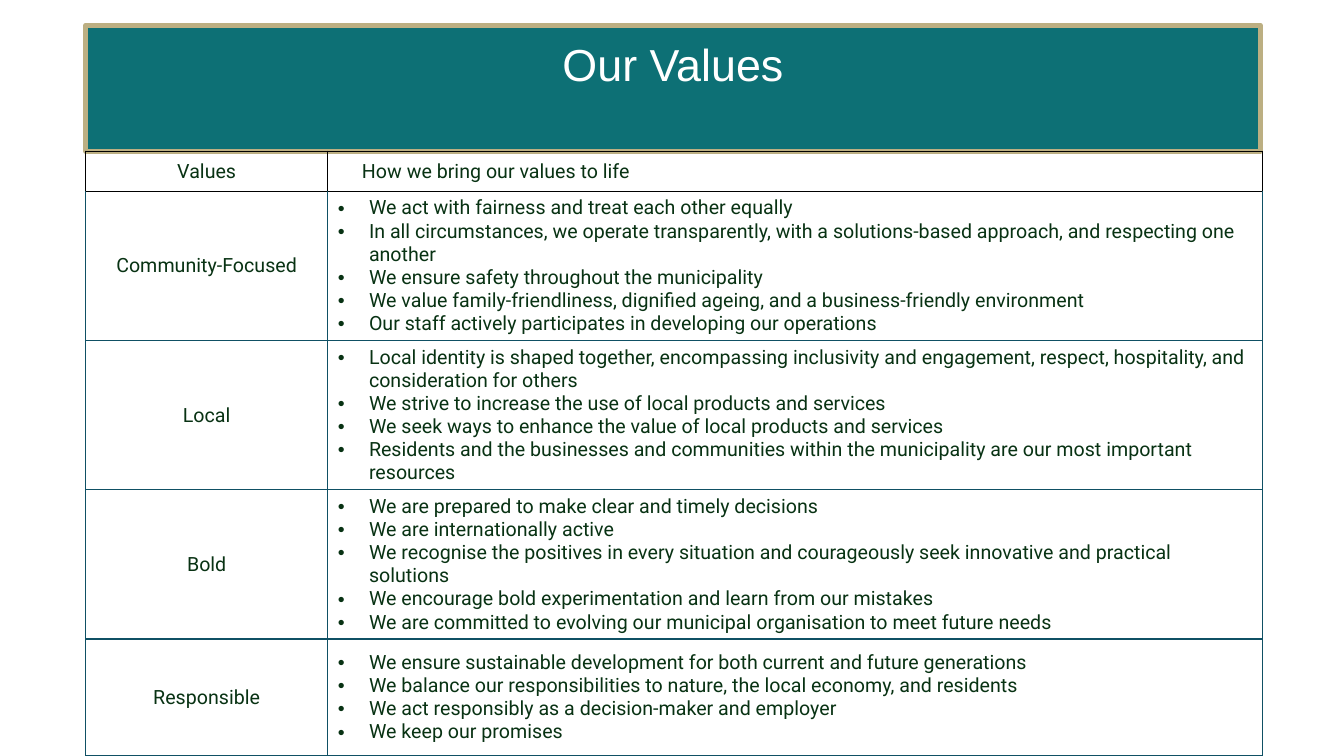
import pptx
import pptx.util
import pptx.dml.color
import pptx.enum.shapes
import pptx.enum.text
import pptx.oxml
import pptx.oxml.ns
from lxml import etree

Inches = pptx.util.Inches
RGBColor = pptx.dml.color.RGBColor
Align = pptx.enum.text.PP_ALIGN
Anchor = pptx.enum.text.MSO_ANCHOR
qn = pptx.oxml.ns.qn

TEAL = RGBColor(0x0D, 0x70, 0x75)
SAND = RGBColor(0xBC, 0xAF, 0x82)
WHITE = RGBColor(0xFF, 0xFF, 0xFF)
BLACK = RGBColor(0, 0, 0)
INK = RGBColor(0x08, 0x32, 0x13)
RULE = RGBColor(0x0F, 0x50, 0x64)

TITLE_BOX = (0.85, 0.25, 11.65, 1.25)
TABLE_BOX = (0.85, 1.5, 11.67, 6)
LABEL_WIDTH = 2.4
HEADER_HEIGHT = 0.4
LAST_HEIGHT = 1.16
BULLET_INDENT = 0.31
HEADER_INDENT = 0.24

HEADINGS = ("Values", "How we bring our values to life")
VALUES = {
    "Community-Focused": [
        "We act with fairness and treat each other equally",
        "In all circumstances, we operate transparently, with a solutions-based approach, "
        "and respecting one another",
        "We ensure safety throughout the municipality",
        "We value family-friendliness, dignified ageing, and a business-friendly environment",
        "Our staff actively participates in developing our operations",
    ],
    "Local": [
        "Local identity is shaped together, encompassing inclusivity and engagement, respect, "
        "hospitality, and consideration for others",
        "We strive to increase the use of local products and services",
        "We seek ways to enhance the value of local products and services",
        "Residents and the businesses and communities within the municipality are our most "
        "important resources",
    ],
    "Bold": [
        "We are prepared to make clear and timely decisions",
        "We are internationally active",
        "We recognise the positives in every situation and courageously seek innovative and "
        "practical solutions",
        "We encourage bold experimentation and learn from our mistakes",
        "We are committed to evolving our municipal organisation to meet future needs",
    ],
    "Responsible": [
        "We ensure sustainable development for both current and future generations",
        "We balance our responsibilities to nature, the local economy, and residents",
        "We act responsibly as a decision-maker and employer",
        "We keep our promises",
    ],
}


def write(frame, lines, size=14, font="Roboto", color=INK, align=Align.LEFT,
          spacing=None, indent=0, bullet=False):
    """Fill a text frame with one paragraph per line."""
    for index, line in enumerate(lines):
        para = frame.paragraphs[0] if index == 0 else frame.add_paragraph()
        para.alignment = align
        if spacing:
            para.line_spacing = spacing
        if indent:
            properties = para._p.get_or_add_pPr()
            properties.set("marL", str(Inches(indent)))
            if bullet:
                properties.set("indent", str(-Inches(indent)))
                face = etree.SubElement(properties, qn("a:buFont"))
                face.set("typeface", "Arial")
                etree.SubElement(properties, qn("a:buChar")).set("char", "•")
        span = para.add_run()
        span.text = line
        span.font.size = pptx.util.Pt(size)
        span.font.name = font
        span.font.bold = False
        span.font.color.rgb = color


def set_borders(cell, **colors):
    """Draw 1 pt borders; colors maps L, R, T and B to a colour."""
    properties = cell._tc.get_or_add_tcPr()
    for index, side in enumerate("LRTB"):
        line = etree.Element(qn("a:ln" + side), w=str(pptx.util.Pt(1)))
        fill = etree.SubElement(line, qn("a:solidFill"))
        etree.SubElement(fill, qn("a:srgbClr")).set("val", str(colors[side]))
        properties.insert(index, line)


def set_fill(cell, tinted):
    if not tinted:
        cell.fill.background()
        return
    cell.fill.solid()
    cell.fill.fore_color.rgb = WHITE
    color = cell._tc.tcPr.find(".//" + qn("a:srgbClr"))
    etree.SubElement(color, qn("a:alpha")).set("val", "20000")


def add_title(page, box):
    banner = page.shapes.add_shape(pptx.enum.shapes.MSO_SHAPE.RECTANGLE, *map(Inches, box))
    banner.shadow.inherit = False
    banner.fill.solid()
    banner.fill.fore_color.rgb = TEAL
    banner.line.color.rgb = SAND
    banner.line.width = pptx.util.Pt(3.5)
    frame = banner.text_frame
    frame.word_wrap = True
    frame.vertical_anchor = Anchor.TOP
    frame.margin_left = frame.margin_right = Inches(0.39)
    frame.margin_top, frame.margin_bottom = Inches(0.17), Inches(0.12)
    write(frame, ["Our Values"], size=32, font="Arial", color=WHITE,
          align=Align.CENTER, spacing=0.9)


def add_values_table(page, box):
    width, height = box[2:]
    table = page.shapes.add_table(len(VALUES) + 1, 2, *map(Inches, box)).table
    table.first_row = table.horz_banding = False
    table.columns[0].width = Inches(LABEL_WIDTH)
    table.columns[1].width = Inches(width - LABEL_WIDTH)
    middle = (height - HEADER_HEIGHT - LAST_HEIGHT) / (len(VALUES) - 1)
    heights = [HEADER_HEIGHT] + [middle] * (len(VALUES) - 1) + [LAST_HEIGHT]
    rows = [(HEADINGS[0], [HEADINGS[1]])] + list(VALUES.items())

    for index, (label, lines) in enumerate(rows):
        header = index == 0
        table.rows[index].height = Inches(heights[index])
        label_cell, text_cell = table.cell(index, 0), table.cell(index, 1)
        write(label_cell.text_frame, [label], align=Align.CENTER)
        write(text_cell.text_frame, lines, bullet=not header,
              indent=HEADER_INDENT if header else BULLET_INDENT)
        side = BLACK if header else RULE
        top = BLACK if index <= 1 else RULE
        for cell in (label_cell, text_cell):
            cell.vertical_anchor = Anchor.MIDDLE
            set_fill(cell, tinted=index % 2 == 1)
            set_borders(cell, L=side, R=side, T=top, B=side)


def main():
    deck = pptx.Presentation()
    deck.slide_width, deck.slide_height = Inches(13.33), Inches(7.5)
    page = deck.slides.add_slide(deck.slide_layouts[6])
    add_title(page, TITLE_BOX)
    add_values_table(page, TABLE_BOX)
    deck.save("out.pptx")


if __name__ == "__main__":
    main()
